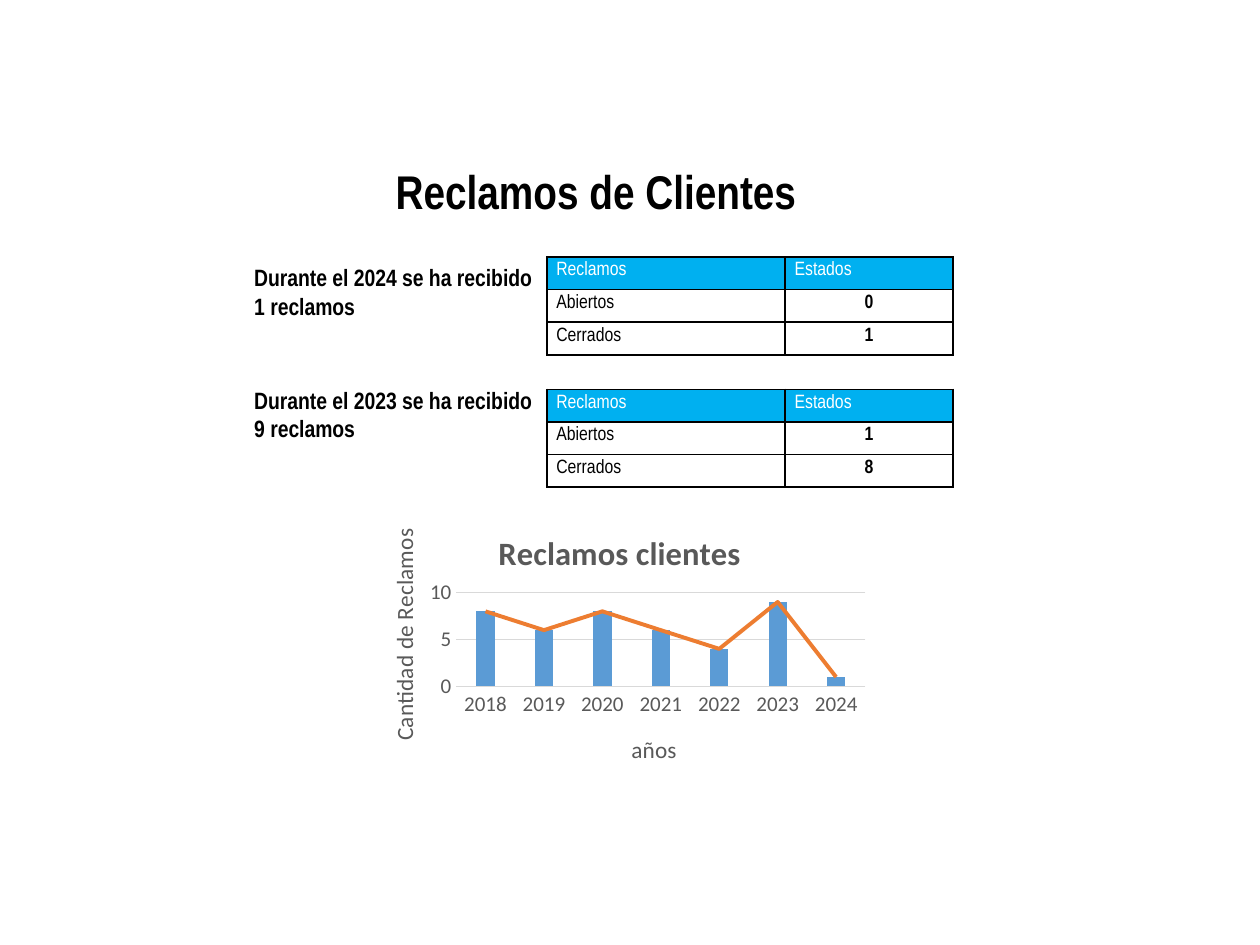
from lxml.etree import SubElement as Sub
from pptx import Presentation
from pptx.chart.data import CategoryChartData as Data
from pptx.dml.color import RGBColor
from pptx.enum.chart import XL_CHART_TYPE as Kind, XL_TICK_MARK as Tick
from pptx.enum.text import PP_ALIGN as Align
from pptx.oxml import parse_xml
from pptx.oxml.ns import nsdecls, qn
from pptx.util import Pt

TITLE = "Reclamos de Clientes"
# text, top of text, top of table, open, closed
YEARS = [
    ("Durante el 2024 se ha recibido 1 reclamos", 146.9, 146.9, 0, 1),
    ("Durante el 2023 se ha recibido 9 reclamos", 216.7, 222.5, 1, 8),
]
COUNTS = {"2018": 8, "2019": 6, "2020": 8, "2021": 6,
          "2022": 4, "2023": 9, "2024": 1}
CHART = "Reclamos clientes"
AXES = "años", "Cantidad de Reclamos"
COLS = 136.2, 95.8
ROW = 18.5
BLACK, WHITE, HEAD = "000000", "FFFFFF", "00B0F0"
GREY, GRID, BAR, LINE = "595959", "D9D9D9", "5B9BD5", "ED7D31"


def color(text):
    return RGBColor.from_string(text)


def style(font, **form):
    form["color"] = color(form["color"])
    for key, val in form.items():
        if key == "color":
            font.color.rgb = val
        else:
            setattr(font, key, val)


def write(frame, text, size, ink=BLACK, bold=False, align=Align.LEFT):
    para = frame.paragraphs[0]
    para.alignment = align
    run = para.add_run()
    run.text = text
    style(run.font, name="Arial Narrow", size=Pt(size), bold=bold, color=ink)
    return para


def add_text(slide, text, box, size, align=Align.LEFT):
    frame = slide.shapes.add_textbox(*map(Pt, box)).text_frame
    frame.word_wrap = True
    return write(frame, text, size, bold=True, align=align)


def border(cell):
    props = cell._tc.get_or_add_tcPr()
    for i, side in enumerate(("lnL", "lnR", "lnT", "lnB")):
        edge = parse_xml(
            f'<a:{side} {nsdecls("a")} w="12700"><a:solidFill>'
            f'<a:srgbClr val="{BLACK}"/></a:solidFill></a:{side}>')
        props.insert(i, edge)


def add_table(slide, top, rows):
    box = map(Pt, (312.5, top, sum(COLS), ROW * len(rows)))
    table = slide.shapes.add_table(len(rows), len(COLS), *box).table
    for col, width in zip(table.columns, COLS):
        col.width = Pt(width)
    for r, row in enumerate(rows):
        table.rows[r].height = Pt(ROW)
        for c, text in enumerate(row):
            cell = table.cell(r, c)
            cell.margin_left = cell.margin_right = Pt(5.4)
            cell.margin_top = cell.margin_bottom = Pt(2.7)
            cell.fill.solid()
            cell.fill.fore_color.rgb = color(WHITE if r else HEAD)
            num = r > 0 and c > 0
            write(cell.text_frame, str(text), 11, BLACK if r else WHITE,
                  num, Align.CENTER if num else Align.LEFT)
            border(cell)


def place(owner, **spots):
    """Set a manual layout, in fractions of the chart."""
    old = owner.find(qn("c:layout"))
    if old is not None:
        owner.remove(old)
    layout = parse_xml(f'<c:layout {nsdecls("c")}/>')
    inner = Sub(layout, qn("c:manualLayout"))
    if "w" in spots:
        Sub(inner, qn("c:layoutTarget")).set("val", "inner")
    for key in "xy":
        Sub(inner, qn(f"c:{key}Mode")).set("val", "edge")
    for key, val in spots.items():
        Sub(inner, qn(f"c:{key}")).set("val", str(val))
    text = owner.find(qn("c:tx"))
    owner.insert(0 if text is None else 1, layout)


def add_title(owner, text, size, bold, x, y):
    owner.has_title = True
    title = owner.chart_title if bold else owner.axis_title
    run = title.text_frame.paragraphs[0].add_run()
    run.text = text
    style(run.font, name="Calibri", size=Pt(size), bold=bold, color=GREY)
    place(title._element, x=x, y=y)


def add_line(bars):
    """Turn the second bar series into a line on the same axes."""
    line = parse_xml(
        f'<c:lineChart {nsdecls("c")}><c:grouping val="standard"/>'
        '<c:varyColors val="0"/></c:lineChart>')
    ser = bars.findall(qn("c:ser"))[1]
    for tag in ser.findall(qn("c:invertIfNegative")):
        ser.remove(tag)
    line.append(ser)
    Sub(line, qn("c:marker")).set("val", "1")
    for axis in bars.findall(qn("c:axId")):
        Sub(line, qn("c:axId")).set("val", axis.get("val"))
    bars.addnext(line)


def add_chart(slide):
    data = Data()
    data.categories = list(COUNTS)
    for name in ("Series 1", "Series 2"):
        data.add_series(name, list(COUNTS.values()))
    box = map(Pt, (204.5, 286.6, 296, 162.7))
    chart = slide.shapes.add_chart(Kind.COLUMN_CLUSTERED, *box, data).chart
    chart.has_legend = False
    style(chart.font, name="Calibri", size=Pt(10), color=BLACK)
    add_title(chart, CHART, 18.6, True, 0.26, 0.08)
    cat, val = chart.category_axis, chart.value_axis
    add_title(cat, AXES[0], 13.3, False, 0.52, 0.8)
    add_title(val, AXES[1], 13.3, False, 0.05, 0.08)
    for axis in (cat, val):
        axis.major_tick_mark = axis.minor_tick_mark = Tick.NONE
        style(axis.tick_labels.font, name="Calibri", size=Pt(12), color=GREY)
    val.minimum_scale, val.maximum_scale, val.major_unit = 0, 10, 5
    val.format.line.fill.background()
    for line in (cat.format.line, val.major_gridlines.format.line):
        line.color.rgb = color(GRID)
        line.width = Pt(0.75)
    plot = chart.plots[0]
    plot.gap_width = 219
    plot.vary_by_categories = False
    fill = plot.series[0].format.fill
    fill.solid()
    fill.fore_color.rgb = color(BAR)
    add_line(plot._element)
    trend = chart.plots[1].series[0]
    trend.smooth = False
    trend.marker.style = None
    trend.format.line.color.rgb = color(LINE)
    trend.format.line.width = Pt(2.25)
    mark = trend._element.get_or_add_marker()
    Sub(mark, qn("c:symbol")).set("val", "none")
    place(plot._element.getparent(), x=0.19, y=0.32, w=0.79, h=0.33)


def main():
    deck = Presentation()
    deck.slide_width, deck.slide_height = Pt(720), Pt(540)
    slide = deck.slides.add_slide(deck.slide_layouts[6])
    head = add_text(slide, TITLE, (108, 92.9, 465, 44), 27, Align.CENTER)
    head.line_spacing = 0.9
    for text, top, edge, opened, closed in YEARS:
        add_text(slide, text, (138.2, top, 174.3, 40.3), 13.5)
        add_table(slide, edge, [("Reclamos", "Estados"),
                                ("Abiertos", opened), ("Cerrados", closed)])
    add_chart(slide)
    deck.save("out.pptx")


if __name__ == "__main__":
    main()
